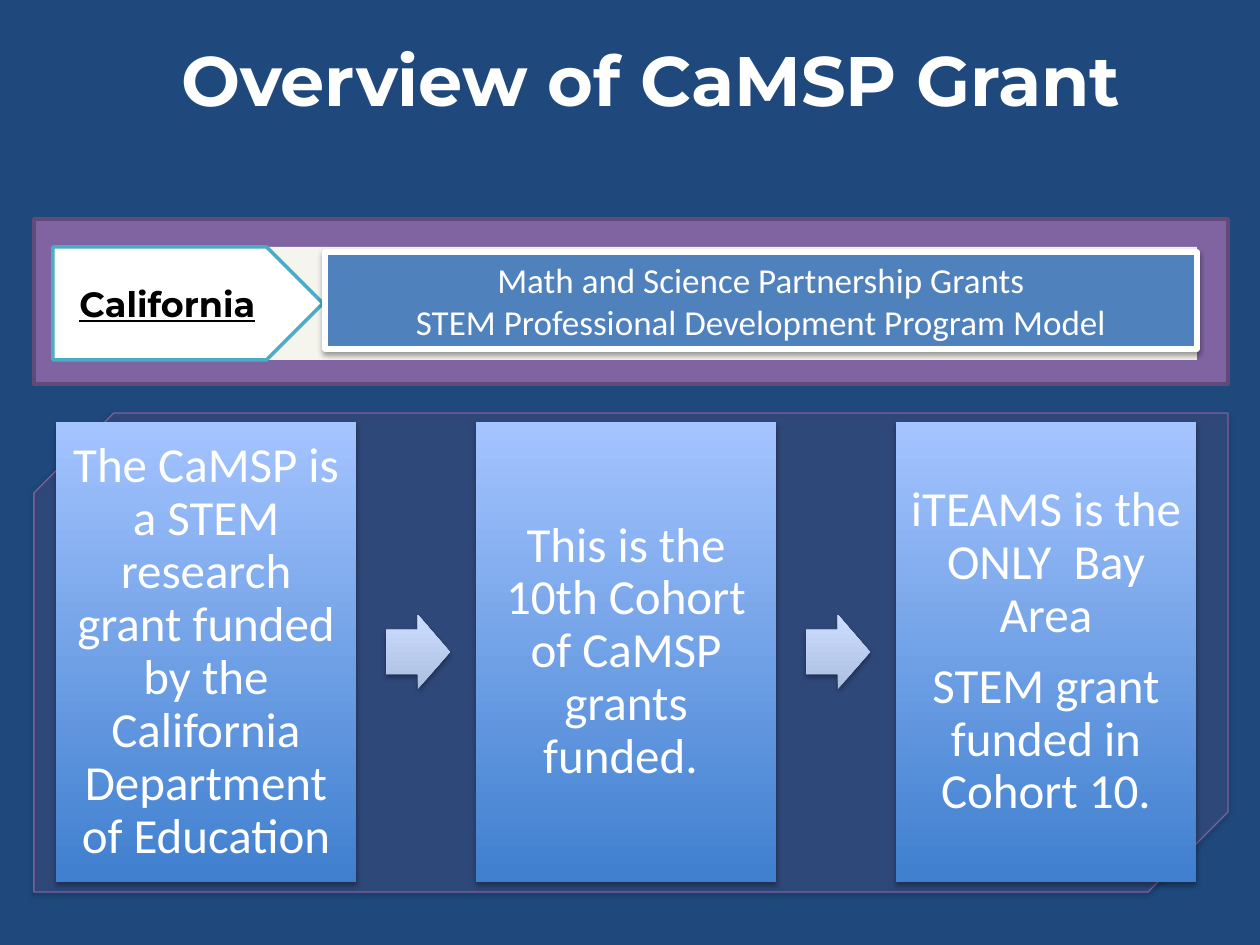
from dataclasses import dataclass
from typing import Optional

import pptx
import pptx.dml.color
import pptx.enum.shapes
import pptx.enum.text
import pptx.oxml
import pptx.oxml.ns
import pptx.util

EMU_PER_PX = 914400 / 126
COLORS = {
    "background": "1F497D", "white": "FFFFFF", "black": "000000",
    "panel": "7A609B", "panel_line": "7D60A0",
    "band": "8064A2", "band_line": "5F4A78",
    "strip": "F5F4ED", "label_line": "4BACC6", "grants": "4F81BD",
    "card_low": "3F7FCE", "card_high": "A4C4FF",
    "arrow_low": "ADBFE1", "arrow_high": "CCDDFF",
}
SHAPE = pptx.enum.shapes.MSO_SHAPE
CENTER = pptx.enum.text.PP_ALIGN.CENTER
MIDDLE = pptx.enum.text.MSO_ANCHOR.MIDDLE


@dataclass(frozen=True)
class Box:
    left: int
    top: int
    width: int
    height: int


@dataclass(frozen=True)
class Look:
    fill: tuple[str, ...]  # one colour, or bottom and top of a gradient
    line: Optional[str] = None
    line_pt: float = 0
    shadow_alpha: int = 0  # percent
    shadow_distance: float = 1.6  # points


@dataclass(frozen=True)
class TextStyle:
    font: dict
    paragraph: dict
    inset: int = 13


CARD = Look(("card_low", "card_high"), shadow_alpha=35, shadow_distance=1.8)
ARROW = Look(("arrow_low", "arrow_high"), shadow_alpha=35, shadow_distance=1.8)
TITLE_TEXT = TextStyle(
    {"name": "Montserrat", "size": pptx.util.Pt(40), "bold": True},
    {"alignment": pptx.enum.text.PP_ALIGN.LEFT})
LABEL_TEXT = TextStyle(
    {"name": "Montserrat", "size": pptx.util.Pt(20), "bold": True, "underline": True},
    {"alignment": CENTER})
GRANTS_TEXT = TextStyle(
    {"name": "Calibri", "size": pptx.util.Pt(20)}, {"alignment": CENTER})
CARD_TEXT = TextStyle(
    {"name": "Calibri", "size": pptx.util.Pt(28)},
    {"alignment": CENTER, "line_spacing": 0.9, "space_after": pptx.util.Pt(10)},
    inset=15)

CARDS = [
    ["The CaMSP is a STEM research grant funded by the California Department of Education"],
    ["This is the 10th Cohort of CaMSP grants funded. "],
    ["iTEAMS is the ONLY  Bay Area", "STEM grant funded in Cohort 10."],
]
CARD_PITCH = 420


def px(length: int) -> int:
    return round(length * EMU_PER_PX)


def rgb(name: str) -> pptx.dml.color.RGBColor:
    return pptx.dml.color.RGBColor.from_string(COLORS[name])


def place(shape, box: Box) -> None:
    for side in ("left", "top", "width", "height"):
        setattr(shape, side, px(getattr(box, side)))


def add_shadow(shape, alpha: int, distance: float) -> None:
    effects = shape._element.spPr.find(pptx.oxml.ns.qn("a:effectLst"))
    effects.append(pptx.oxml.parse_xml(
        f'<a:outerShdw {pptx.oxml.ns.nsdecls("a")} blurRad="{pptx.util.Pt(3.1)}" '
        f'dist="{pptx.util.Pt(distance)}" dir="5400000" rotWithShape="0">'
        f'<a:srgbClr val="{COLORS["black"]}"><a:alpha val="{alpha * 1000}"/></a:srgbClr>'
        '</a:outerShdw>'))


def draw(slide, kind, box: Box, look: Look):
    shape = slide.shapes.add_shape(kind, 0, 0, 0, 0)
    place(shape, box)
    if len(look.fill) == 1:
        shape.fill.solid()
        shape.fill.fore_color.rgb = rgb(look.fill[0])
    else:
        shape.fill.gradient()
        shape.fill.gradient_angle = 90
        for stop, color in zip(shape.fill.gradient_stops, look.fill):
            stop.color.rgb = rgb(color)
    if look.line:
        shape.line.color.rgb = rgb(look.line)
        shape.line.width = pptx.util.Pt(look.line_pt)
    else:
        shape.line.fill.background()
    shape.shadow.inherit = False
    if look.shadow_alpha:
        add_shadow(shape, look.shadow_alpha, look.shadow_distance)
    return shape


def write(shape, lines: list[str], style: TextStyle, color: str = "white") -> None:
    frame = shape.text_frame
    frame.word_wrap = True
    frame.vertical_anchor = MIDDLE
    for side in ("left", "right"):
        setattr(frame, f"margin_{side}", px(style.inset))
    for side in ("top", "bottom"):
        setattr(frame, f"margin_{side}", px(style.inset if style.inset > 13 else 6))
    frame.text = "\n".join(lines)
    for paragraph in frame.paragraphs:
        for name, value in style.paragraph.items():
            setattr(paragraph, name, value)
        for run in paragraph.runs:
            for name, value in style.font.items():
                setattr(run.font, name, value)
            run.font.color.rgb = rgb(color)


def draw_panel(slide) -> None:
    panel = draw(slide, SHAPE.SNIP_2_DIAG_RECTANGLE, Box(34, 413, 1194, 479),
                 Look(("panel",), "panel_line", 0.75, shadow_alpha=38))
    panel._element.spPr.xfrm.set("flipH", "1")
    fill_color = panel._element.spPr.find(
        pptx.oxml.ns.qn("a:solidFill")).find(pptx.oxml.ns.qn("a:srgbClr"))
    fill_color.append(pptx.oxml.parse_xml(
        f'<a:alpha {pptx.oxml.ns.nsdecls("a")} val="21000"/>'))


def draw_band(slide) -> None:
    draw(slide, SHAPE.RECTANGLE, Box(34, 219, 1194, 165), Look(("band",), "band_line", 2))
    draw(slide, SHAPE.RECTANGLE, Box(221, 247, 976, 113), Look(("strip",)))
    label = draw(slide, SHAPE.PENTAGON, Box(53, 247, 270, 113),
                 Look(("white",), "label_line", 2))
    write(label, ["California\t"], LABEL_TEXT, "black")
    grants = draw(slide, SHAPE.RECTANGLE, Box(325, 252, 872, 97),
                  Look(("grants",), "white", 3, shadow_alpha=38))
    write(grants, ["Math and Science Partnership Grants",
                   "STEM Professional Development Program Model"], GRANTS_TEXT)


def draw_process(slide) -> None:
    for index, lines in enumerate(CARDS):
        left = 56 + index * CARD_PITCH
        card = draw(slide, SHAPE.RECTANGLE, Box(left, 422, 300, 460), CARD)
        write(card, lines, CARD_TEXT)
        if index < len(CARDS) - 1:
            arrow = draw(slide, SHAPE.RIGHT_ARROW, Box(left + 330, 615, 64, 74), ARROW)
            arrow.adjustments[0] = 0.6


def main() -> None:
    deck = pptx.Presentation()
    deck.slide_width, deck.slide_height = px(1260), px(945)
    slide = deck.slides.add_slide(deck.slide_layouts.get_by_name("Title Only"))
    slide.background.fill.solid()
    slide.background.fill.fore_color.rgb = rgb("background")

    # Title
    place(slide.shapes.title, Box(168, 30, 1060, 97))
    write(slide.shapes.title, ["Overview of CaMSP Grant"], TITLE_TEXT)

    # Grant band above, three-step process on its panel below
    draw_panel(slide)
    draw_band(slide)
    draw_process(slide)
    deck.save("out.pptx")


if __name__ == "__main__":
    main()
